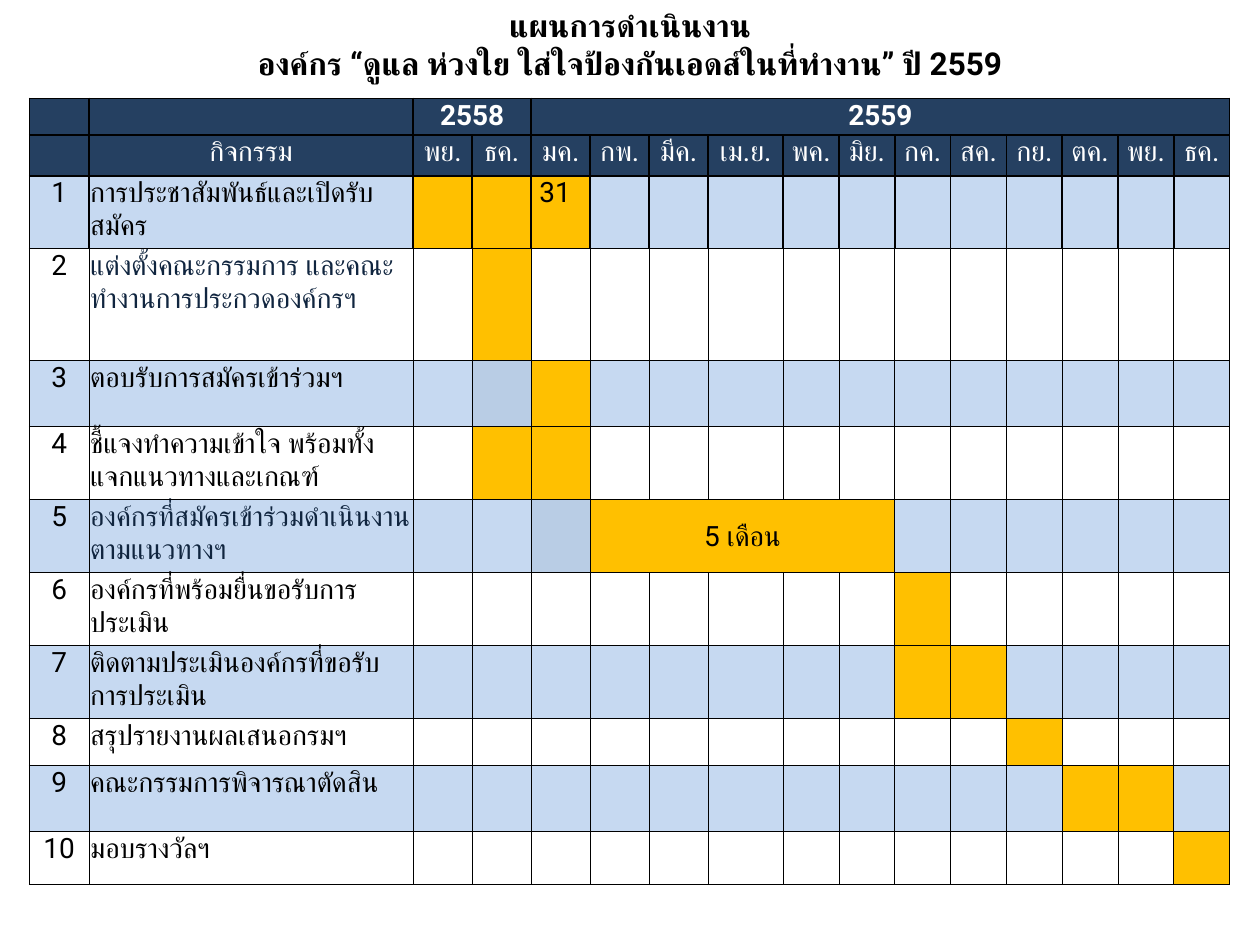
from collections import namedtuple
from dataclasses import dataclass

from lxml import etree
from pptx import Presentation
from pptx import util as u
from pptx.dml.color import RGBColor
from pptx.enum import text
from pptx.oxml import ns

Box = namedtuple("Box", "left top width height")
Activity = namedtuple("Activity", "name busy pale color", defaults=((), None))


@dataclass(frozen=True)
class Theme:
    font: str = "Roboto"
    title_size: float = 18
    table_size: float = 16
    black: str = "000000"
    white: str = "FFFFFF"
    navy: str = "254061"
    ink: str = "10253F"
    band: str = "C6D9F1"
    pale: str = "B9CDE5"
    busy: str = "FFC000"
    thin: float = 0.5
    thick: float = 1


THEME = Theme()
TITLE = ["แผนการดำเนินงาน",
         "องค์กร “ดูแล ห่วงใย ใส่ใจป้องกันเอดส์ในที่ทำงาน” ปี 2559"]
MONTHS = ["พย.", "ธค.", "มค.", "กพ.", "มีค.", "เม.ย.", "พค.", "มิย.",
          "กค.", "สค.", "กย.", "ตค.", "พย.", "ธค."]
# Busy and pale months are indexes into MONTHS
ACTIVITIES = [
    Activity("การประชาสัมพันธ์และเปิดรับสมัคร", (0, 1, 2)),
    Activity("แต่งตั้งคณะกรรมการ และคณะทำงานการประกวดองค์กรฯ", (1,), color=THEME.ink),
    Activity("ตอบรับการสมัครเข้าร่วมฯ", (2,), (1,)),
    Activity("ชี้แจงทำความเข้าใจ พร้อมทั้งแจกแนวทางและเกณฑ์", (1, 2)),
    Activity("องค์กรที่สมัครเข้าร่วมดำเนินงานตามแนวทางฯ", range(3, 8), (2,), THEME.ink),
    Activity("องค์กรที่พร้อมยื่นขอรับการประเมิน", (8,)),
    Activity("ติดตามประเมินองค์กรที่ขอรับการประเมิน", (8, 9)),
    Activity("สรุปรายงานผลเสนอกรมฯ", (10,)),
    Activity("คณะกรรมการพิจารณาตัดสิน", (11, 12)),
    Activity("มอบรางวัลฯ", (13,)),
]
HEADER_ROWS = 2
FIRST_MONTH = 2
COLUMN_WIDTHS = [34.2, 185.2] + [33.7] * 5 + [42.9] + [31.9] * 8
ROW_HEIGHTS = [21.1, 23.4, 41.7, 64, 37.7] + [41.7] * 4 + [26.9, 37.7, 30.3]


def write(paragraph, content, size=THEME.table_size, color=THEME.black,
          bold=False, align=text.PP_ALIGN.LEFT):
    paragraph.alignment = align
    run = paragraph.add_run()
    run.text = content
    run.font.size = u.Pt(size)
    run.font.bold = bold
    run.font.name = THEME.font
    run.font.color.rgb = RGBColor.from_string(color)
    # Thai letters take the complex-script font
    etree.SubElement(run.font._element, ns.qn("a:cs"), typeface=THEME.font)


def draw_borders(cell, widths):
    properties = cell._tc.get_or_add_tcPr()
    for side, width in widths.items():
        line = etree.SubElement(properties, ns.qn(f"a:ln{side}"), w=str(u.Pt(width)))
        fill = etree.SubElement(line, ns.qn("a:solidFill"))
        etree.SubElement(fill, ns.qn("a:srgbClr"), val=THEME.black)


def format_cell(table, row, column, fill):
    """Header lines are thick inside; all other lines are thin."""
    cell = table.cell(row, column)
    upper = row <= HEADER_ROWS

    def width(is_thick):
        return THEME.thick if is_thick else THEME.thin

    draw_borders(cell, {
        "L": width(upper and column > 0),
        "R": width(upper and column < len(COLUMN_WIDTHS) - 1),
        "T": width(upper and row > 0),
        "B": width(row < HEADER_ROWS),
    })
    cell.fill.solid()
    cell.fill.fore_color.rgb = RGBColor.from_string(fill)
    cell.margin_left = cell.margin_right = cell.margin_top = u.Pt(0.7)
    cell.margin_bottom = 0
    # Empty cells keep the table's text size, so rows do not grow
    etree.SubElement(cell.text_frame.paragraphs[0]._p, ns.qn("a:endParaRPr"),
                     sz=str(THEME.table_size * 100))


def cell_fill(row, column):
    if row < HEADER_ROWS:
        return THEME.navy
    index, month = row - HEADER_ROWS, column - FIRST_MONTH
    if month in ACTIVITIES[index].busy:
        return THEME.busy
    if month in ACTIVITIES[index].pale:
        return THEME.pale
    return THEME.white if index % 2 else THEME.band


def place_title(slide, box):
    title = slide.shapes.title
    title.left, title.top, title.width, title.height = map(u.Pt, box)
    frame = title.text_frame
    frame.word_wrap = True
    frame.auto_size = text.MSO_AUTO_SIZE.NONE
    frame.vertical_anchor = text.MSO_ANCHOR.TOP
    for number, line in enumerate(TITLE):
        paragraph = frame.add_paragraph() if number else frame.paragraphs[0]
        write(paragraph, line, size=THEME.title_size, bold=True,
              align=text.PP_ALIGN.CENTER)


def place_schedule(slide, box):
    frame = slide.shapes.add_table(len(ROW_HEIGHTS), len(COLUMN_WIDTHS), *map(u.Pt, box))
    table = frame.table
    table.first_row = table.horz_banding = False

    # Grid
    for column, width in zip(table.columns, COLUMN_WIDTHS):
        column.width = u.Pt(width * box.width / sum(COLUMN_WIDTHS))
    for row, height in zip(table.rows, ROW_HEIGHTS):
        row.height = u.Pt(height * box.height / sum(ROW_HEIGHTS))
    for row in range(len(ROW_HEIGHTS)):
        for column in range(len(COLUMN_WIDTHS)):
            format_cell(table, row, column, cell_fill(row, column))

    def fill_in(row, column, content, **style):
        write(table.cell(row, column).text_frame.paragraphs[0], content, **style)

    centered = {"align": text.PP_ALIGN.CENTER}
    header = {"color": THEME.white, **centered}

    # Years and months
    for year, first, last in (("2558", 0, 1), ("2559", 2, 13)):
        start = table.cell(0, FIRST_MONTH + first)
        start.merge(table.cell(0, FIRST_MONTH + last))
        fill_in(0, FIRST_MONTH + first, year, bold=True, **header)
    for column, label in enumerate(["กิจกรรม"] + MONTHS, start=1):
        fill_in(1, column, label, **header)

    # Activities
    for number, activity in enumerate(ACTIVITIES, start=1):
        row = number + HEADER_ROWS - 1
        fill_in(row, 0, str(number), **centered)
        fill_in(row, 1, activity.name, color=activity.color or THEME.black)

    # Closing day and five-month span
    closing = table.cell(2, FIRST_MONTH + 2)
    closing.margin_left = u.Pt(4.7)
    fill_in(2, FIRST_MONTH + 2, "31")
    span = table.cell(6, FIRST_MONTH + 3)
    span.merge(table.cell(6, FIRST_MONTH + 7))
    span.vertical_anchor = text.MSO_ANCHOR.MIDDLE
    fill_in(6, FIRST_MONTH + 3, "5 เดือน", **centered)


def main():
    presentation = Presentation()
    presentation.slide_width, presentation.slide_height = u.Pt(720), u.Pt(540)
    slide = presentation.slides.add_slide(presentation.slide_layouts[5])
    place_title(slide, Box(0, 0, 720, 51))
    place_schedule(slide, Box(16.7, 56, 686.2, 449.6))
    presentation.save("out.pptx")


if __name__ == "__main__":
    main()
